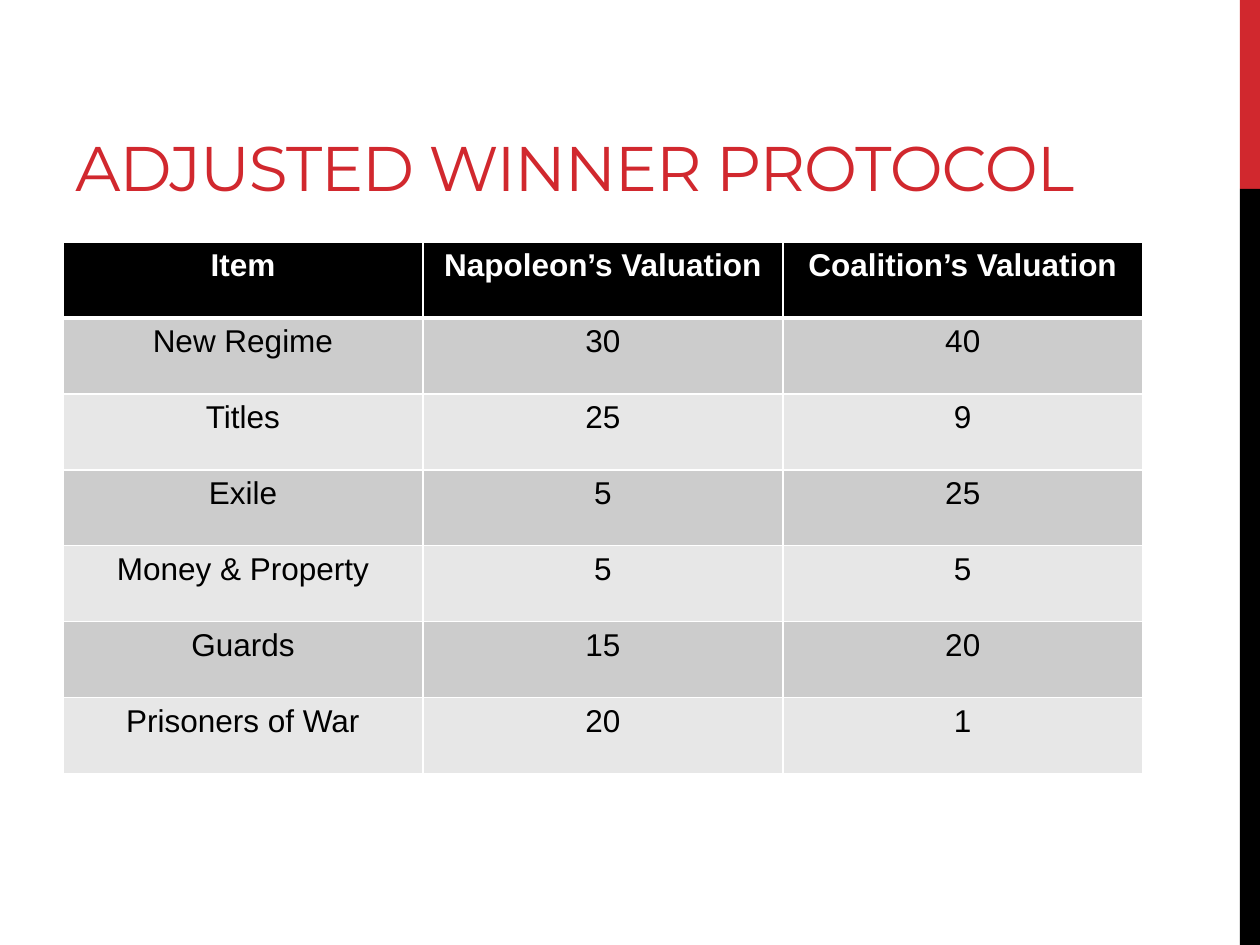
from dataclasses import dataclass

from lxml import etree
from pptx import Presentation
from pptx.dml.color import RGBColor
from pptx.enum.shapes import MSO_SHAPE
from pptx.enum.text import MSO_ANCHOR, PP_ALIGN
from pptx.oxml.ns import qn
from pptx.util import Inches, Pt

RECTANGLE = MSO_SHAPE.RECTANGLE
BOTTOM = MSO_ANCHOR.BOTTOM
LEFT = PP_ALIGN.LEFT
CENTER = PP_ALIGN.CENTER
GRID_COLUMNS, GRID_ROWS = 100, 75
BLANK_LAYOUT = 6


@dataclass(frozen=True)
class Theme:
    accent: str = "D1282E"
    dark: str = "000000"
    light: str = "FFFFFF"
    bands: tuple = ("CCCCCC", "E7E7E7")
    title_font: str = "Montserrat"
    body_font: str = "Arial"
    title_size: int = 36
    body_size: int = 18
    title_spacing: int = -60
    thin_line: int = 1
    header_line: int = 3


class SlideBuilder:
    def __init__(self, presentation, theme):
        self.theme = theme
        self.column = presentation.slide_width / GRID_COLUMNS
        self.row = presentation.slide_height / GRID_ROWS
        self.slide = presentation.slides.add_slide(presentation.slide_layouts[BLANK_LAYOUT])

    def place(self, left, top, width, height):
        return (round(left * self.column), round(top * self.row),
                round(width * self.column), round(height * self.row))

    def bar(self, area, color):
        shape = self.slide.shapes.add_shape(RECTANGLE, *self.place(*area))
        shape.shadow.inherit = False
        shape.fill.solid()
        shape.fill.fore_color.rgb = RGBColor.from_string(color)
        shape.line.fill.background()

    def styled_text(self, text_frame, text, font_name, size, color, alignment, bold=False):
        text_frame.text = text
        paragraph = text_frame.paragraphs[0]
        paragraph.alignment = alignment
        run = paragraph.runs[0]
        run.font.name = font_name
        run.font.size = Pt(size)
        run.font.bold = bold
        run.font.color.rgb = RGBColor.from_string(color)
        return run

    def title(self, area, text):
        theme = self.theme
        text_frame = self.slide.shapes.add_textbox(*self.place(*area)).text_frame
        text_frame.word_wrap = True
        text_frame.vertical_anchor = BOTTOM
        run = self.styled_text(text_frame, text, theme.title_font, theme.title_size,
                               theme.accent, LEFT)
        run.font._element.set("spc", str(theme.title_spacing))

    def borders(self, cell, widths):
        properties = cell._tc.get_or_add_tcPr()
        for side, width in widths.items():
            line = etree.SubElement(properties, qn(f"a:ln{side}"), w=str(Pt(width)))
            fill = etree.SubElement(line, qn("a:solidFill"))
            etree.SubElement(fill, qn("a:srgbClr"), val=self.theme.light)

    def table(self, area, records):
        theme = self.theme
        frame = self.slide.shapes.add_table(len(records), len(records[0]), *self.place(*area))
        for row_index, record in enumerate(records):
            header = row_index == 0
            background = theme.dark if header else theme.bands[(row_index - 1) % 2]
            color = theme.light if header else theme.dark
            widths = dict.fromkeys("LRTB", theme.thin_line)
            if header:
                widths["B"] = theme.header_line
            elif row_index == 1:
                widths["T"] = theme.header_line
            for column_index, value in enumerate(record):
                cell = frame.table.cell(row_index, column_index)
                self.borders(cell, widths)
                cell.fill.solid()
                cell.fill.fore_color.rgb = RGBColor.from_string(background)
                self.styled_text(cell.text_frame, str(value), theme.body_font,
                                 theme.body_size, color, CENTER, header)


def main():
    presentation = Presentation()
    presentation.slide_width, presentation.slide_height = Inches(10), Inches(7.5)
    theme = Theme()
    builder = SlideBuilder(presentation, theme)
    builder.bar((98.4, 0, 1.6, 15), theme.accent)
    builder.bar((98.4, 15, 1.6, 60), theme.dark)
    builder.title((5, 1.7, 90.1, 15), "ADJUSTED WINNER PROTOCOL")
    builder.table((5, 19.2, 85.7, 42.2), [
        ("Item", "Napoleon’s Valuation", "Coalition’s Valuation"),
        ("New Regime", 30, 40),
        ("Titles", 25, 9),
        ("Exile", 5, 25),
        ("Money & Property", 5, 5),
        ("Guards", 15, 20),
        ("Prisoners of War", 20, 1),
    ])
    presentation.save("out.pptx")


if __name__ == "__main__":
    main()
